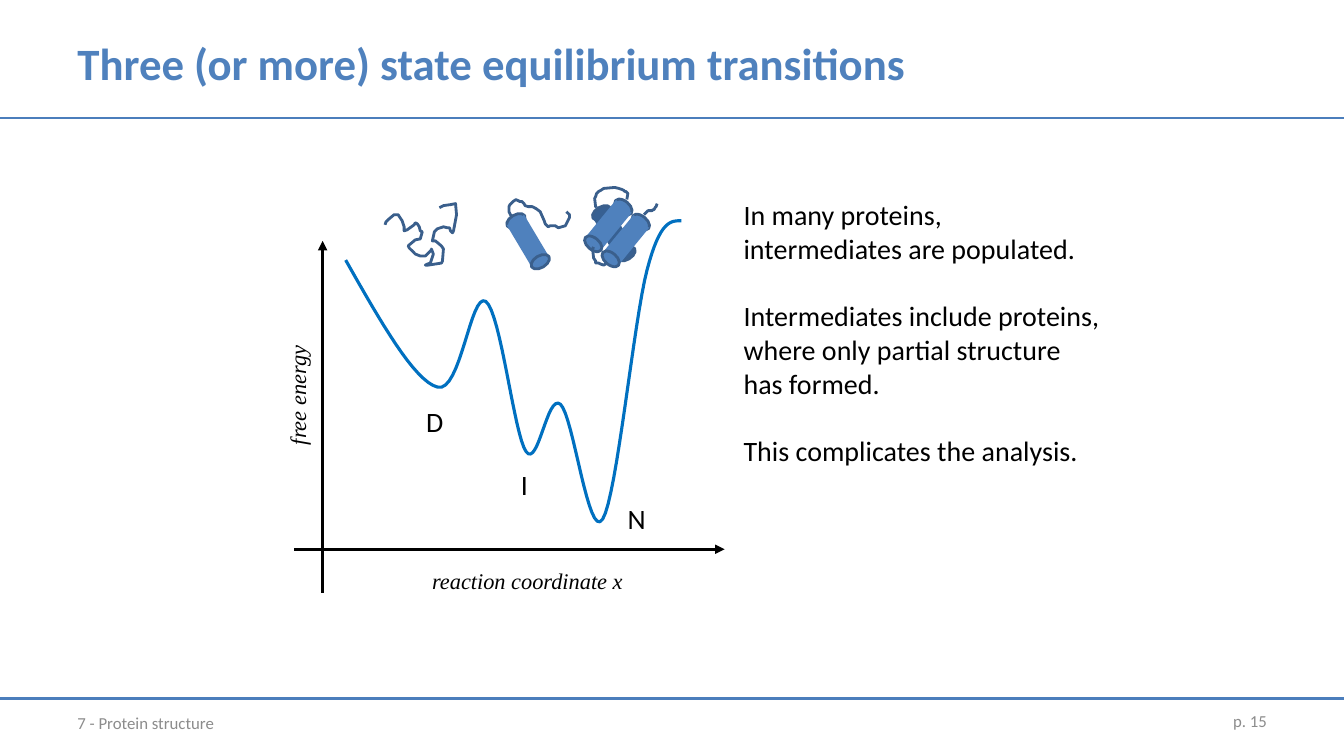
import math
from lxml import etree
from pptx import Presentation
from pptx.dml.color import RGBColor
from pptx.enum import shapes, text
from pptx.oxml import ns
from pptx.util import Cm, Pt

BLUE = RGBColor(0x4F, 0x81, 0xBD)
RULE = RGBColor(0x4B, 0x7E, 0xBC)
EDGE = RGBColor(0x3A, 0x5F, 0x8C)
DARK = RGBColor(0x37, 0x60, 0x92)
CURVE = RGBColor(0x00, 0x70, 0xC0)
GREY = RGBColor(0x8C, 0x8C, 0x8C)
BLACK = RGBColor(0, 0, 0)

SANS, SERIF = "Calibri", "Times New Roman"
UNIT = Cm(2.54) / 100  # grid step for drawn outlines

# Start point, then two control points and an end point per bend
ENERGY = [
    (343, 258),
    (377, 318), (411, 378), (434, 384),
    (457, 391), (467, 289), (482, 299),
    (497, 310), (510, 431), (522, 448),
    (534, 465), (543, 390), (556, 401),
    (569, 412), (584, 538), (598, 515),
    (612, 493), (629, 317), (642, 268),
    (655, 218), (666, 219), (676, 219),
]

# Chain outlines in grid steps
COIL = [
    (382, 223), (383, 220), (385, 218), (391, 213), (393, 213), (395, 213),
    (397, 216), (399, 219), (401, 225), (401, 229), (404, 228), (411, 223),
    (412, 221), (414, 222), (416, 225), (417, 229), (419, 230), (417, 237),
    (412, 238), (406, 243), (405, 244), (406, 246), (410, 250), (412, 252),
    (417, 254), (422, 254), (425, 251), (426, 250), (428, 248), (428, 247),
    (430, 252), (427, 261), (424, 262), (422, 263), (425, 263), (438, 261),
    (439, 259), (440, 247), (438, 244), (432, 239), (429, 239), (431, 230),
    (434, 227), (440, 225), (444, 226), (446, 226), (447, 229), (449, 231),
    (450, 229), (453, 213), (452, 202), (447, 203), (440, 204), (436, 206),
]
TAIL = [
    (507, 214), (505, 210), (505, 207), (505, 205), (506, 203), (509, 200),
    (512, 198), (516, 200), (518, 200), (520, 202), (521, 204), (524, 205),
    (528, 205), (532, 207), (536, 210), (540, 219), (541, 222), (544, 225),
    (546, 224), (549, 224), (551, 224), (554, 226), (561, 224), (565, 216),
    (565, 213), (562, 210),
]
TURN = [
    (589, 245), (588, 247), (589, 256), (591, 259), (591, 261), (592, 261),
    (594, 261), (596, 262), (599, 263), (601, 262), (601, 260),
]
STUB = [
    (639, 213), (643, 209), (647, 209), (648, 208), (649, 208), (650, 206),
    (651, 205), (652, 202),
]
LOOP = [
    (622, 198), (623, 192), (622, 191), (621, 190), (620, 190), (619, 189),
    (617, 188), (614, 187), (610, 186), (599, 187), (596, 189), (594, 190),
    (592, 192), (591, 195), (590, 197), (591, 205), (592, 206),
]


def add_text(slide, box, lines, size, color=BLACK, font=SANS, bold=False,
             italic=False, align=text.PP_ALIGN.LEFT,
             anchor=text.MSO_ANCHOR.TOP, wrap=True, gap=0):
    shape = slide.shapes.add_textbox(*map(Cm, box))
    frame = shape.text_frame
    frame.word_wrap = wrap
    frame.vertical_anchor = anchor
    if not wrap:
        frame.auto_size = text.MSO_AUTO_SIZE.SHAPE_TO_FIT_TEXT
    frame.text = "\n".join(lines)
    for i, para in enumerate(frame.paragraphs):
        para.alignment = align
        para.space_before = Pt(gap if i else 0)
        face = para.font
        face.name, face.size = font, Pt(size)
        face.bold, face.italic = bold, italic
        face.color.rgb = color
    return shape


def add_line(slide, ends, color, width, arrow=False):
    line = slide.shapes.add_connector(
        shapes.MSO_CONNECTOR.STRAIGHT, *map(Cm, ends))
    line.line.color.rgb = color
    line.line.width = Pt(width)
    if arrow:
        etree.SubElement(line.line._get_or_add_ln(), ns.qn("a:tailEnd"),
                         type="triangle")
    etree.SubElement(line._element.spPr, ns.qn("a:effectLst"))


def add_path(slide, points, color, width):
    points = [(x * UNIT, y * UNIT) for x, y in points]
    pen = slide.shapes.build_freeform(*points[0])
    pen.add_line_segments(points[1:], close=False)
    shape = pen.convert_to_shape()
    shape.shadow.inherit = False
    shape.fill.background()
    shape.line.color.rgb = color
    shape.line.width = Pt(width)


def bend(points, steps=16):
    """Sample a chain of cubic curves."""
    out = [points[0]]
    for i in range(0, len(points) - 1, 3):
        for k in range(1, steps + 1):
            t = k / steps
            parts = ((1 - t) ** 3, 3 * t * (1 - t) ** 2,
                     3 * t * t * (1 - t), t ** 3)
            out.append(tuple(sum(w * p[axis] for w, p in
                                 zip(parts, points[i:i + 4]))
                             for axis in (0, 1)))
    return out


def add_helix(slide, x, y, angle, fill):
    """Draw a tilted cylinder centred at x, y: cap, body, cap."""
    wide, reach = 0.51, 0.6
    turn = math.radians(angle)
    dx, dy = reach * math.sin(turn), -reach * math.cos(turn)
    kind = shapes.MSO_SHAPE
    for side, form, high in ((1, kind.OVAL, 0.3), (0, kind.RECTANGLE, 1.24),
                             (-1, kind.OVAL, 0.3)):
        part = slide.shapes.add_shape(
            form, Cm(x + side * dx - wide / 2), Cm(y + side * dy - high / 2),
            Cm(wide), Cm(high))
        part.rotation = angle
        part.shadow.inherit = False
        part.fill.solid()
        part.fill.fore_color.rgb = fill
        if side:
            part.line.color.rgb = EDGE
            part.line.width = Pt(2)
        else:
            part.line.fill.background()


def main():
    deck = Presentation()
    deck.slide_width, deck.slide_height = Cm(33.87), Cm(19.05)
    slide = deck.slides.add_slide(deck.slide_layouts[6])
    mid = text.MSO_ANCHOR.MIDDLE

    # Title, rules and footer
    for y in (17.6, 2.97):
        add_line(slide, (0, y, 33.87, y), RULE, 1.5)
    add_text(slide, (1.7, 0, 30.48, 3.18),
             ["Three (or more) state equilibrium transitions"],
             32, BLUE, bold=True, anchor=mid)
    add_text(slide, (1.7, 17.7, 10.72, 1.02), ["7 - Protein structure"],
             12, GREY, anchor=mid)
    add_text(slide, (24.28, 17.65, 7.9, 1.02), ["p. 15"], 12, GREY,
             align=text.PP_ALIGN.RIGHT, anchor=mid)

    # Axes and their names
    add_line(slide, (8.13, 14.94, 8.13, 6.07), BLACK, 2.25, arrow=True)
    add_line(slide, (7.42, 13.84, 18.26, 13.84), BLACK, 2.25, arrow=True)
    name = add_text(slide, (5.97, 9.47, 3.05, 0.94), ["free energy"], 16,
                    font=SERIF, italic=True, wrap=False)
    name.rotation = 270
    add_text(slide, (10.64, 14.17, 5.38, 0.94), ["reaction coordinate x"], 16,
             font=SERIF, italic=True, wrap=False)

    # Energy curve and its states
    add_path(slide, bend(ENERGY), CURVE, 2.25)
    for state, x, y, wide in (("D", 10.49, 10.06, 0.94),
                              ("I", 12.88, 11.66, 0.69),
                              ("N", 15.57, 12.52, 0.97)):
        add_text(slide, (x, y, wide, 1.12), [state], 20, wrap=False)

    # Remarks
    add_text(slide, (18.49, 4.85, 9.5, 7.09),
             ["In many proteins, intermediates are populated.",
              "Intermediates include proteins, where only partial structure "
              "has formed.",
              "This complicates the analysis."], 20, gap=24.4)

    # Unfolded, partly folded and folded chains
    add_path(slide, COIL, EDGE, 2)
    add_helix(slide, 13.31, 6.08, 329.2, BLUE)
    add_path(slide, TAIL, EDGE, 2)
    for x, y, angle, fill in ((15.47, 5.88, 329.2, DARK),
                              (15.33, 5.68, 39.3, BLUE),
                              (15.77, 6.06, 39.3, BLUE)):
        add_helix(slide, x, y, angle, fill)
    for chain in (TURN, STUB, LOOP):
        add_path(slide, chain, EDGE, 2)

    deck.save("out.pptx")


if __name__ == "__main__":
    main()
